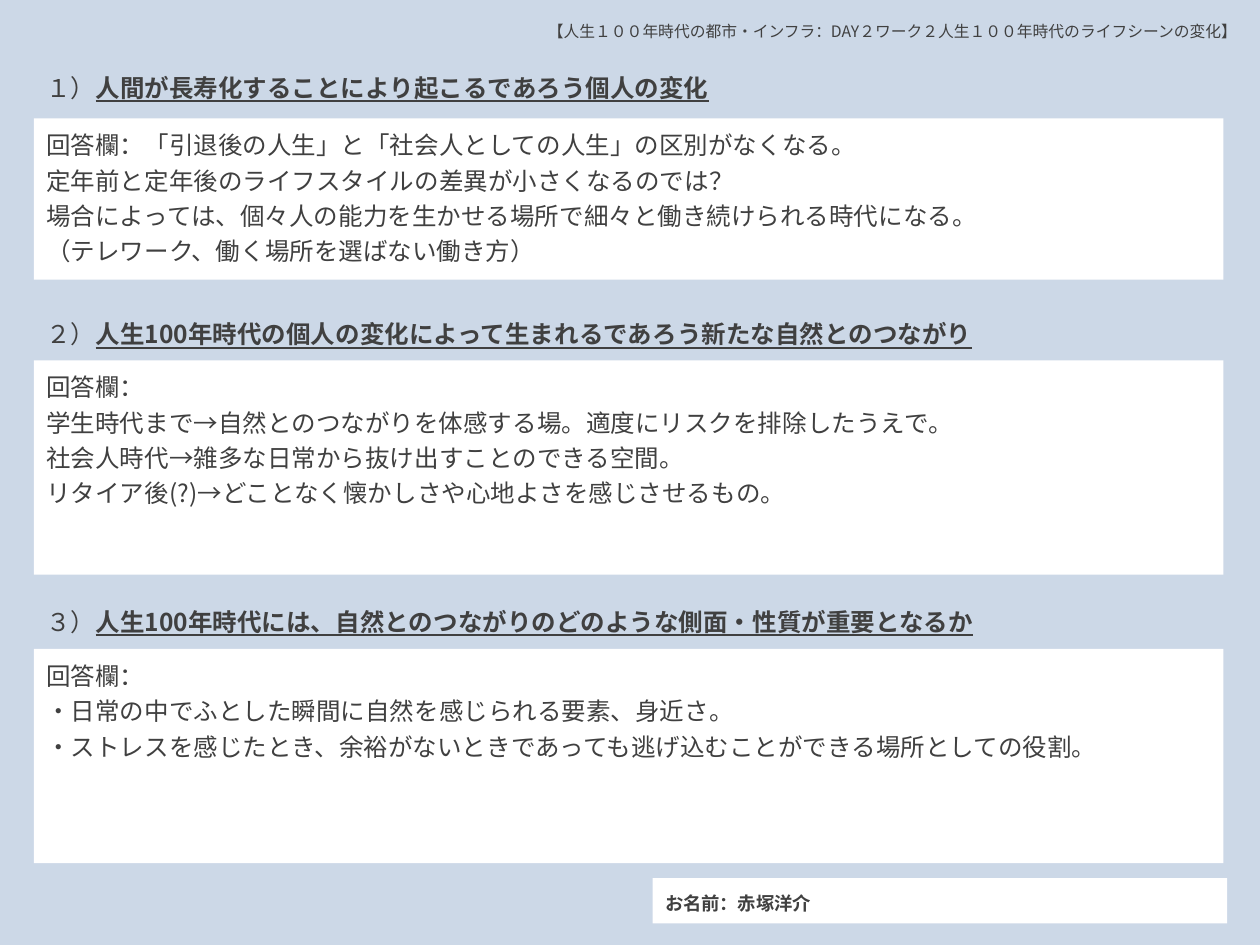
from copy import deepcopy

from pptx import Presentation
from pptx.dml.color import RGBColor
from pptx.enum.shapes import MSO_SHAPE
from pptx.enum.text import MSO_ANCHOR, PP_ALIGN
from pptx.oxml.ns import qn
from pptx.oxml.xmlchemy import OxmlElement
from pptx.util import Inches, Pt

WIDE, HIGH = Inches(10), Inches(7.5)
FONT = "Noto Sans CJK JP"
BACK, PAPER, INK = "CCD8E7", "FFFFFF", "404040"
LEFT, SPAN = 2.7, 94.4  # percent of the slide's width

# number, heading, heading (top, width), answer (top, height), answer lines
PARTS = [
    ("１）", "人間が長寿化することにより起こるであろう個人の変化",
     (6.4, 56), (12.53, 17.07),
     ["回答欄：「引退後の人生」と「社会人としての人生」の区別がなくなる。",
      "定年前と定年後のライフスタイルの差異が小さくなるのでは？\n"
      "場合によっては、個々人の能力を生かせる場所で細々と働き続けられる時代になる。",
      "（テレワーク、働く場所を選ばない働き方）"]),
    ("２）", "人生100年時代の個人の変化によって生まれるであろう新たな自然とのつながり",
     (32.53, 83.8), (38.13, 22.67),
     ["回答欄：",
      "学生時代まで→自然とのつながりを体感する場。適度にリスクを排除したうえで。",
      "社会人時代→雑多な日常から抜け出すことのできる空間。",
      "リタイア後(?)→どことなく懐かしさや心地よさを感じさせるもの。"]),
    ("３）", "人生100年時代には、自然とのつながりのどのような側面・性質が重要となるか",
     (62.93, 83.8), (68.67, 22.67),
     ["回答欄：",
      "・日常の中でふとした瞬間に自然を感じられる要素、身近さ。",
      "・ストレスを感じたとき、余裕がないときであっても逃げ込むことができる場所としての役割。"]),
]


def paint(fill, code):
    fill.solid()
    fill.fore_color.rgb = RGBColor.from_string(code)


def place(x, y, w, h):
    """Turn percentages of the slide's size into lengths."""
    return [int(side * part / 100)
            for side, part in zip((WIDE, HIGH, WIDE, HIGH), (x, y, w, h))]


def style(run, size, bold=False, line=False):
    font = run.font
    font.name, font.size = FONT, Pt(size)
    font.bold, font.underline = bold, line
    paint(font.fill, INK)
    east = OxmlElement("a:ea")
    east.set("typeface", FONT)
    run._r.rPr.find(qn("a:latin")).addnext(east)


def write(frame, lines, size, bold=False):
    """Fill a frame, one paragraph for each item of lines."""
    for i, line in enumerate(lines):
        para = frame.add_paragraph() if i else frame.paragraphs[0]
        para.text = line
        para.alignment, para.line_spacing = PP_ALIGN.LEFT, 1.2
        for run in para.runs:
            style(run, size, bold)
        # A line break takes its height from its own run properties.
        for gap in para._p.findall(qn("a:br")):
            gap.insert(0, deepcopy(para.runs[0]._r.rPr))


def add_label(slide, box, text, size, wrap=True):
    frame = slide.shapes.add_textbox(*place(*box)).text_frame
    frame.word_wrap = wrap
    write(frame, [text], size)
    return frame.paragraphs[0]


def add_panel(slide, box, lines, size, bold=False, anchor=MSO_ANCHOR.TOP):
    panel = slide.shapes.add_shape(MSO_SHAPE.RECTANGLE, *place(*box))
    panel.shadow.inherit = False
    paint(panel.fill, PAPER)
    panel.line.fill.background()
    frame = panel.text_frame
    frame.word_wrap, frame.vertical_anchor = True, anchor
    write(frame, lines, size, bold)


def add_part(slide, number, title, head, answer, lines):
    (top, width), (low, tall) = head, answer
    para = add_label(slide, (LEFT, top, width, 6), number, 14)
    run = para.add_run()
    run.text = title
    style(run, 14, bold=True, line=True)
    add_panel(slide, (LEFT, low, SPAN, tall), lines, 14)


def main():
    deck = Presentation()
    deck.slide_width, deck.slide_height = WIDE, HIGH
    slide = deck.slides.add_slide(deck.slide_layouts[6])
    paint(slide.background.fill, BACK)
    add_label(slide, (42.5, 1.2, 57.5, 4.8),
              "【人生１００年時代の都市・インフラ：DAY２ワーク２人生１００年時代のライフシーンの変化】",
              9, wrap=False)
    for part in PARTS:
        add_part(slide, *part)
    add_panel(slide, (51.8, 92.93, 45.6, 4.8), ["お名前：赤塚洋介"], 10.5,
              bold=True, anchor=MSO_ANCHOR.MIDDLE)
    deck.save("out.pptx")


if __name__ == "__main__":
    main()
